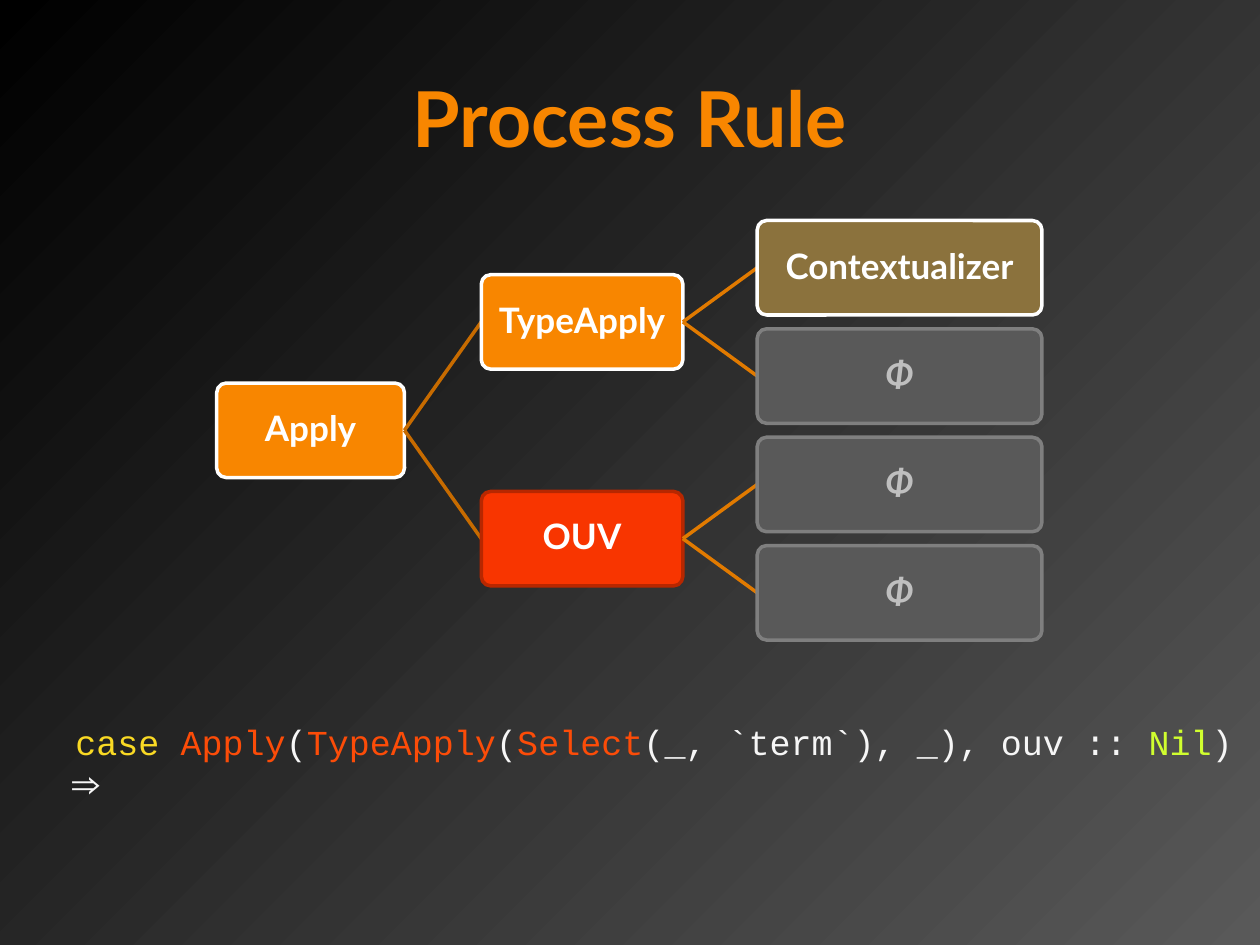
from lxml.etree import SubElement
from pptx import Presentation
from pptx.dml.color import RGBColor
from pptx.enum.shapes import MSO_CONNECTOR, MSO_SHAPE
from pptx.enum.text import MSO_ANCHOR, PP_ALIGN
from pptx.oxml.ns import qn
from pptx.util import Inches, Pt

BLACK = RGBColor(0x00, 0x00, 0x00)
WHITE = RGBColor(0xFF, 0xFF, 0xFF)
ORANGE = RGBColor(0xF8, 0x86, 0x00)
AMBER = RGBColor(0xE1, 0x7A, 0x00)
RUST = RGBColor(0xC7, 0x6B, 0x00)
BROWN = RGBColor(0x8B, 0x72, 0x3D)
RED = RGBColor(0xF8, 0x35, 0x00)
MAROON = RGBColor(0xB7, 0x27, 0x00)
DARK = RGBColor(0x59, 0x59, 0x59)
GREY = RGBColor(0x7F, 0x7F, 0x7F)
SILVER = RGBColor(0xBF, 0xBF, 0xBF)
YELLOW = RGBColor(0xF9, 0xD9, 0x24)
CORAL = RGBColor(0xFC, 0x4C, 0x08)
PALE = RGBColor(0xF6, 0xF6, 0xF6)
LIME = RGBColor(0xD0, 0xFE, 0x2F)

COLS = [(1.72, 1.49), (3.82, 1.6), (6.01, 2.26)]
TOP, PITCH, HIGH = 1.75, 0.86, 0.75
LINKS = [RUST, AMBER]

HOT = (ORANGE, WHITE, WHITE)
EMPTY = (DARK, GREY, SILVER)
TREE = ("Apply", 1.5, HOT, [
    ("TypeApply", 0.5, HOT, [
        ("Contextualizer", 0, (BROWN, WHITE, WHITE), []),
        ("Φ", 1, EMPTY, []),
    ]),
    ("OUV", 2.5, (RED, MAROON, WHITE), [
        ("Φ", 2, EMPTY, []),
        ("Φ", 3, EMPTY, []),
    ]),
])

CODE = [
    ("case ", YELLOW), ("Apply", CORAL), ("(", PALE), ("TypeApply", CORAL),
    ("(", PALE), ("Select", CORAL), ("(_, `term`), _), ouv :: ", PALE),
    ("Nil", LIME), (") ⇒", PALE),
]


def set_font(font, name, size, color=None, bold=None):
    font.name, font.size, font.bold = name, Pt(size), bold
    if color is not None:
        font.color.rgb = color


def paint_back(slide):
    fill = slide.background.fill
    fill.gradient()
    fill.gradient_angle = 315
    for stop, color in zip(fill.gradient_stops, (BLACK, DARK)):
        stop.color.rgb = color


def add_title(slide, text):
    title = slide.shapes.title
    title.left, title.top = Inches(0.5), Inches(0.3)
    title.width, title.height = Inches(9), Inches(1.25)
    title.text_frame.text = text
    title.text_frame.vertical_anchor = MSO_ANCHOR.MIDDLE
    para = title.text_frame.paragraphs[0]
    para.alignment = PP_ALIGN.CENTER
    set_font(para.font, "Lato", 44, ORANGE, True)


def add_node(slide, text, col, row, style):
    left, width = COLS[col]
    fill, edge, ink = style
    box = slide.shapes.add_shape(
        MSO_SHAPE.ROUNDED_RECTANGLE, Inches(left), Inches(TOP + row * PITCH),
        Inches(width), Inches(HIGH))
    box.adjustments[0] = 0.1
    box.shadow.inherit = False
    box.fill.solid()
    box.fill.fore_color.rgb = fill
    box.line.color.rgb = edge
    box.line.width = Pt(2)
    frame = box.text_frame
    frame.margin_left = frame.margin_right = Inches(0.03)
    frame.margin_top = frame.margin_bottom = Inches(0.03)
    frame.vertical_anchor = MSO_ANCHOR.MIDDLE
    frame.text = text
    para = frame.paragraphs[0]
    para.alignment = PP_ALIGN.CENTER
    para.line_spacing = 0.9
    set_font(para.font, "Lato", 20, ink, True)
    para.font.italic = text == "Φ"


def add_link(slide, col, start, end):
    left, width = COLS[col]
    mid = TOP + HIGH / 2
    link = slide.shapes.add_connector(
        MSO_CONNECTOR.STRAIGHT,
        Inches(left + width), Inches(mid + start * PITCH),
        Inches(COLS[col + 1][0]), Inches(mid + end * PITCH))
    link.line.color.rgb = LINKS[col]
    link.line.width = Pt(2)
    SubElement(link.element.spPr, qn("a:effectLst"))


def add_tree(slide, node, col=0):
    text, row, style, kids = node
    add_node(slide, text, col, row, style)
    for kid in kids:
        add_link(slide, col, row, kid[1])
        add_tree(slide, kid, col + 1)


def add_code(slide, parts):
    box = slide.shapes.add_textbox(
        Inches(0.5), Inches(5.62), Inches(9.5), Inches(1.48))
    frame = box.text_frame
    frame.word_wrap = True
    frame.margin_top = Inches(0.1)
    para = frame.paragraphs[0]
    set_font(para.font, "Courier New", 20)
    for text, color in parts:
        run = para.add_run()
        run.text = text
        run.font.color.rgb = color


def main():
    deck = Presentation()
    deck.slide_width, deck.slide_height = Inches(10), Inches(7.5)
    slide = deck.slides.add_slide(deck.slide_layouts[5])
    paint_back(slide)
    add_title(slide, "Process Rule")
    add_tree(slide, TREE)
    add_code(slide, CODE)
    deck.save("out.pptx")


if __name__ == "__main__":
    main()
